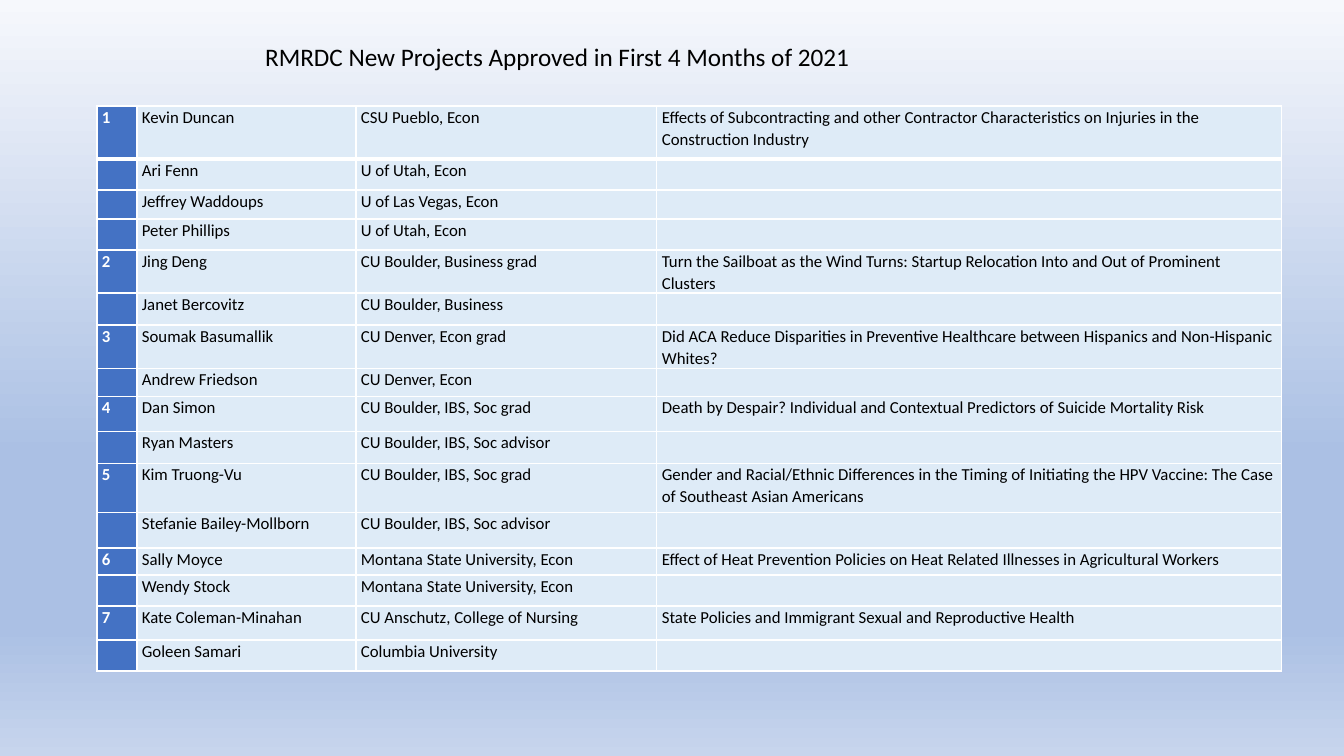
from pptx import Presentation
from pptx.dml.color import RGBColor
from pptx.enum.text import MSO_ANCHOR as Anchor, MSO_AUTO_SIZE as Fit, PP_ALIGN as Align
from pptx.oxml import parse_xml
from pptx.oxml.ns import nsdecls
from pptx.util import Emu, Pt

FONT = "Calibri"
BLACK = RGBColor(0x00, 0x00, 0x00)
WHITE = RGBColor(0xFF, 0xFF, 0xFF)
BLUE = RGBColor(0x44, 0x72, 0xC4)
PALE = RGBColor(0xDE, 0xEB, 0xF7)
MIST = RGBColor(0xF6, 0xF8, 0xFC)
SKY = RGBColor(0xAB, 0xC0, 0xE4)
HAZE = RGBColor(0xC7, 0xD5, 0xED)
STOPS = [(0, MIST), (60, SKY), (83, SKY), (100, HAZE)]

TITLE = "RMRDC New Projects Approved in First 4 Months of 2021"
PROJECTS = [
    ("Effects of Subcontracting and other Contractor Characteristics on Injuries in the "
     "Construction Industry",
     [("Kevin Duncan", "CSU Pueblo, Econ"),
      ("Ari Fenn", "U of Utah, Econ"),
      ("Jeffrey Waddoups", "U of Las Vegas, Econ"),
      ("Peter Phillips", "U of Utah, Econ")]),
    ("Turn the Sailboat as the Wind Turns: Startup Relocation Into and Out of Prominent Clusters",
     [("Jing Deng", "CU Boulder, Business grad"),
      ("Janet Bercovitz", "CU Boulder, Business")]),
    ("Did ACA Reduce Disparities in Preventive Healthcare between Hispanics and "
     "Non-Hispanic Whites?",
     [("Soumak Basumallik", "CU Denver, Econ grad"),
      ("Andrew Friedson", "CU Denver, Econ")]),
    ("Death by Despair? Individual and Contextual Predictors of Suicide Mortality Risk",
     [("Dan Simon", "CU Boulder, IBS, Soc grad"),
      ("Ryan Masters", "CU Boulder, IBS, Soc advisor")]),
    ("Gender and Racial/Ethnic Differences in the Timing of Initiating the HPV Vaccine: "
     "The Case of Southeast Asian Americans",
     [("Kim Truong-Vu", "CU Boulder, IBS, Soc grad"),
      ("Stefanie Bailey-Mollborn", "CU Boulder, IBS, Soc advisor")]),
    ("Effect of Heat Prevention Policies on Heat Related Illnesses in Agricultural Workers",
     [("Sally Moyce", "Montana State University, Econ"),
      ("Wendy Stock", "Montana State University, Econ")]),
    ("State Policies and Immigrant Sexual and Reproductive Health",
     [("Kate Coleman-Minahan", "CU Anschutz, College of Nursing"),
      ("Goleen Samari", "Columbia University")]),
]
COLS = [40, 219, 301, 625]
ROWS = [53, 31, 29, 31, 43, 32, 43, 28, 35, 32, 49, 36, 27, 31, 34, 31]


def px(n):
    return Emu(round(n * 914400 / 100.8))


def set_font(par, size, color, bold=False):
    font = par.font
    font.name, font.size, font.bold = FONT, Pt(size), bold
    font.color.rgb = color


def paint_back(slide):
    stops = "".join(
        f'<a:gs pos="{pos * 1000}"><a:srgbClr val="{color}"/></a:gs>' for pos, color in STOPS)
    slide.element.cSld.insert(0, parse_xml(
        f'<p:bg {nsdecls("p", "a")}><p:bgPr><a:gradFill><a:gsLst>{stops}</a:gsLst>'
        '<a:lin ang="5400000" scaled="0"/></a:gradFill><a:effectLst/></p:bgPr></p:bg>'))


def add_title(slide):
    title = slide.shapes.title
    title.left, title.top, title.width, title.height = map(px, (255, 36, 692, 40))
    frame = title.text_frame
    frame.text = TITLE
    frame.word_wrap = True
    frame.auto_size = Fit.SHAPE_TO_FIT_TEXT
    frame.vertical_anchor = Anchor.TOP
    par = frame.paragraphs[0]
    par.alignment = Align.LEFT
    set_font(par, 18, BLACK)


def list_rows():
    """One row a person; number and topic only beside a project's first."""
    rows = []
    for num, (topic, team) in enumerate(PROJECTS, 1):
        for i, (name, place) in enumerate(team):
            rows.append(("" if i else str(num), name, place, "" if i else topic))
    return rows


def add_edges(cell, base):
    """White borders, with the bottom one base points wide."""
    props = cell._tc.get_or_add_tcPr()
    for i, (side, wide) in enumerate(zip("LRTB", (1, 1, 1, base))):
        props.insert(i, parse_xml(
            f'<a:ln{side} {nsdecls("a")} w="{Pt(wide)}"><a:solidFill>'
            f'<a:srgbClr val="{WHITE}"/></a:solidFill></a:ln{side}>'))


def fill_cell(cell, text, key, base):
    cell.text = text
    cell.margin_left = cell.margin_right = px(5)
    cell.margin_top = cell.margin_bottom = 0
    cell.fill.solid()
    cell.fill.fore_color.rgb = BLUE if key else PALE
    par = cell.text_frame.paragraphs[0]
    par.line_spacing = 1.07
    set_font(par, 12, WHITE if key else BLACK, key)
    add_edges(cell, base)


def add_grid(slide):
    rows = list_rows()
    table = slide.shapes.add_table(
        len(rows), len(COLS), px(97), px(106), px(sum(COLS)), px(sum(ROWS))).table
    table.first_row = table.horz_banding = False
    for col, wide in zip(table.columns, COLS):
        col.width = px(wide)
    for r, (row, high) in enumerate(zip(rows, ROWS)):
        table.rows[r].height = px(high)
        for c, text in enumerate(row):
            fill_cell(table.cell(r, c), text, c == 0, 1 if r else 3)


def main():
    deck = Presentation()
    deck.slide_width, deck.slide_height = px(1344), px(756)
    slide = deck.slides.add_slide(deck.slide_layouts[5])
    paint_back(slide)
    add_title(slide)
    add_grid(slide)
    deck.save("out.pptx")


if __name__ == "__main__":
    main()
